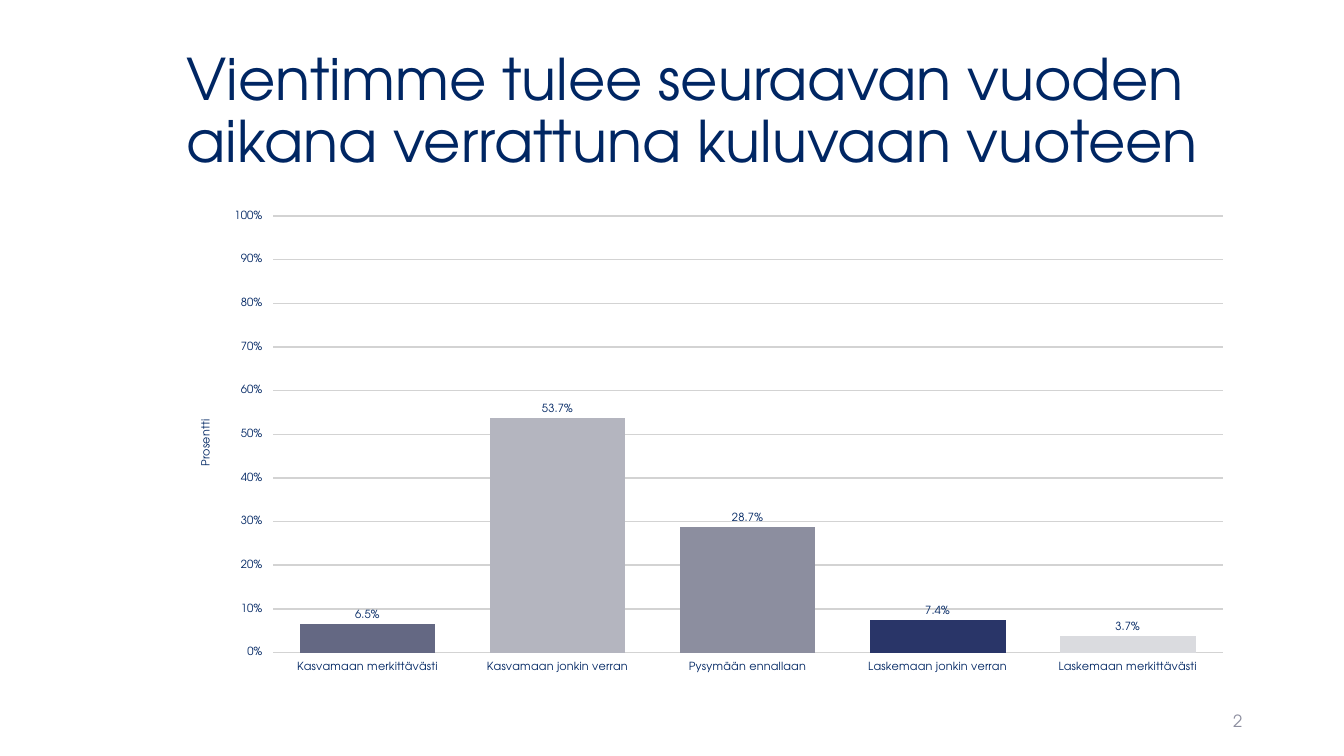
from dataclasses import dataclass

from lxml.etree import SubElement
from pptx import Presentation
from pptx.chart.data import CategoryChartData
from pptx.dml.color import RGBColor
from pptx.enum.chart import XL_CHART_TYPE as ChartType, XL_LABEL_POSITION as LabelPosition
from pptx.enum.chart import XL_TICK_MARK as TickMark
from pptx.enum.text import MSO_ANCHOR as Anchor, PP_ALIGN as Align
from pptx.oxml.ns import qn
from pptx.util import Inches, Pt


@dataclass(frozen=True)
class Theme:
    font: str = "TeX Gyre Adventor"
    navy: str = "002663"
    gray: str = "8C8E9F"
    grid: str = "D3D3D3"
    bars: tuple = ("646883", "B4B5BF", "8C8E9F", "293568", "DADBDF")
    title_size: int = 41
    number_size: int = 12
    chart_size: int = 8


class SlideBuilder:
    def __init__(self, slide, theme):
        self.slide = slide
        self.theme = theme

    def style(self, font, size, color):
        font.name = self.theme.font
        font.size = Pt(size)
        font.bold = False
        font.color.rgb = RGBColor.from_string(color)

    def text(self, box, wording, size, color, align=Align.LEFT, line_spacing=1.0):
        frame = self.slide.shapes.add_textbox(*map(Inches, box)).text_frame
        frame.word_wrap = True
        frame.vertical_anchor = Anchor.MIDDLE
        paragraph = frame.paragraphs[0]
        paragraph.text = wording
        paragraph.alignment = align
        paragraph.line_spacing = line_spacing
        self.style(paragraph.font, size, color)

    def place(self, parent, index, **settings):
        for old_layout in parent.findall(qn("c:layout")):
            parent.remove(old_layout)
        layout = SubElement(parent, qn("c:layout"))
        parent.insert(index, layout)
        manual = SubElement(layout, qn("c:manualLayout"))
        for tag, setting in settings.items():
            SubElement(manual, qn(f"c:{tag}")).set("val", str(setting))

    def axis(self, axis):
        self.style(axis.tick_labels.font, self.theme.chart_size, self.theme.navy)
        axis.major_tick_mark = TickMark.OUTSIDE
        axis.format.line.fill.background()

    def column_chart(self, box, shares, axis_title):
        theme = self.theme
        data = CategoryChartData(number_format="0.0%")
        data.categories = list(shares)
        data.add_series("Series 1", list(shares.values()))
        chart = self.slide.shapes.add_chart(
            ChartType.COLUMN_CLUSTERED, *map(Inches, box), data
        ).chart
        chart.has_legend = False
        chart.has_title = False
        self.style(chart.font, theme.chart_size, theme.navy)

        self.axis(chart.category_axis)
        percent = chart.value_axis
        self.axis(percent)
        percent.minimum_scale, percent.maximum_scale, percent.major_unit = 0, 1, 0.1
        percent.tick_labels.number_format = "0%"
        percent.tick_labels.number_format_is_linked = False
        percent.major_gridlines.format.line.color.rgb = RGBColor.from_string(theme.grid)
        percent.major_gridlines.format.line.width = Pt(1)

        heading = percent.axis_title
        heading.text_frame.text = axis_title
        self.style(heading.text_frame.paragraphs[0].font, theme.chart_size, theme.navy)
        title_xml = percent._element.find(qn("c:title"))
        body = next(title_xml.iter(qn("a:bodyPr")))
        body.set("rot", "-5400000")
        body.set("vert", "horz")
        self.place(title_xml, 1, xMode="edge", yMode="edge", x=0.02, y=0.45)

        plot = chart.plots[0]
        plot.gap_width = 40
        plot.overlap = -2
        plot.vary_by_categories = False
        plot.has_data_labels = True
        labels = plot.data_labels
        labels.show_value = True
        labels.number_format = "0.0%"
        labels.number_format_is_linked = False
        labels.position = LabelPosition.OUTSIDE_END
        self.style(labels.font, theme.chart_size, theme.navy)
        for index, color in enumerate(theme.bars):
            fill = plot.series[0].points[index].format.fill
            fill.solid()
            fill.fore_color.rgb = RGBColor.from_string(color)
        plot_area = next(chart._chartSpace.iter(qn("c:plotArea")))
        self.place(
            plot_area, 0, layoutTarget="inner", xMode="edge", yMode="edge",
            x=0.09, y=0.03, w=0.89, h=0.91,
        )


def main():
    theme = Theme()
    deck = Presentation()
    deck.slide_width, deck.slide_height = Inches(13.33), Inches(7.5)
    builder = SlideBuilder(deck.slides.add_slide(deck.slide_layouts[6]), theme)
    builder.text(
        (1.75, 0.4, 10.59, 1.45),
        "Vientimme tulee seuraavan vuoden aikana verrattuna kuluvaan vuoteen",
        theme.title_size, theme.navy, line_spacing=0.9,
    )
    builder.text((9.42, 6.95, 3, 0.4), "2", theme.number_size, theme.gray, Align.RIGHT)
    export_outlook = {
        "Kasvamaan merkittävästi": 0.065,
        "Kasvamaan jonkin verran": 0.537,
        "Pysymään ennallaan": 0.287,
        "Laskemaan jonkin verran": 0.074,
        "Laskemaan merkittävästi": 0.037,
    }
    builder.column_chart((1.75, 2, 10.59, 4.76), export_outlook, "Prosentti")
    deck.save("out.pptx")


if __name__ == "__main__":
    main()
